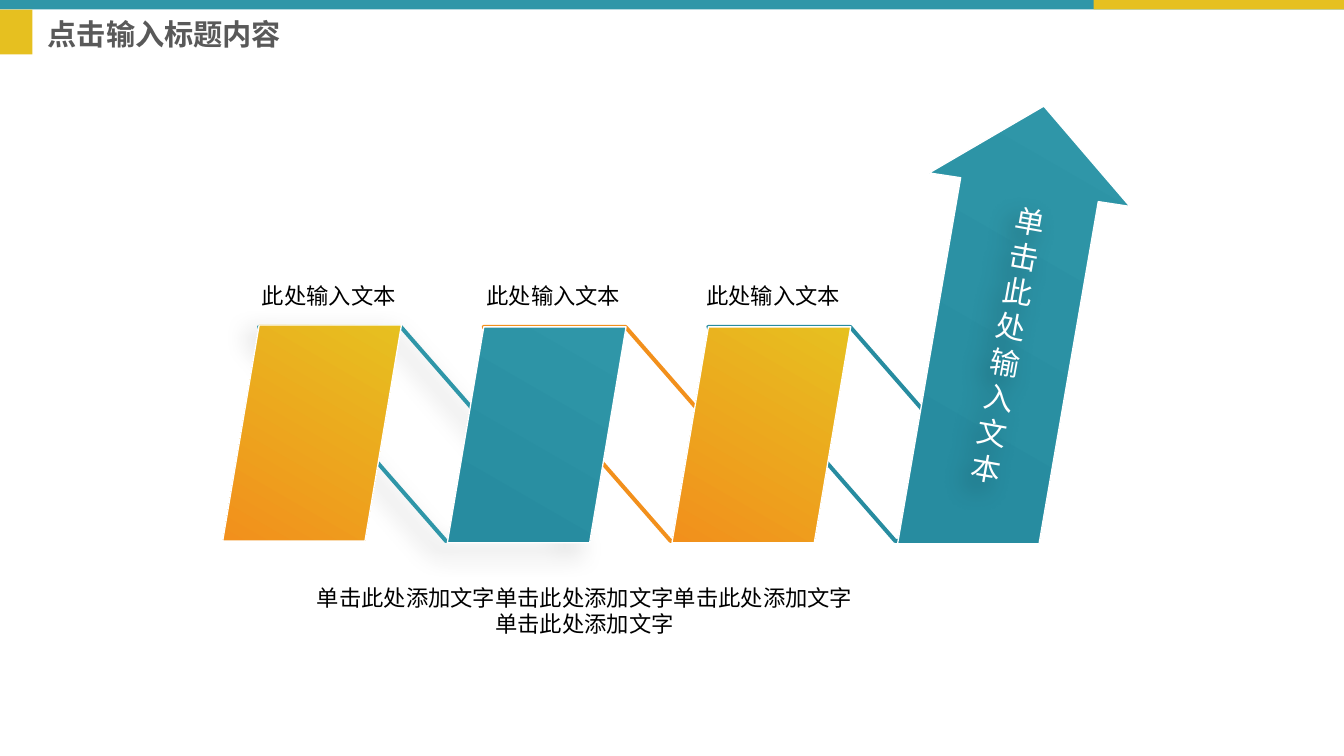
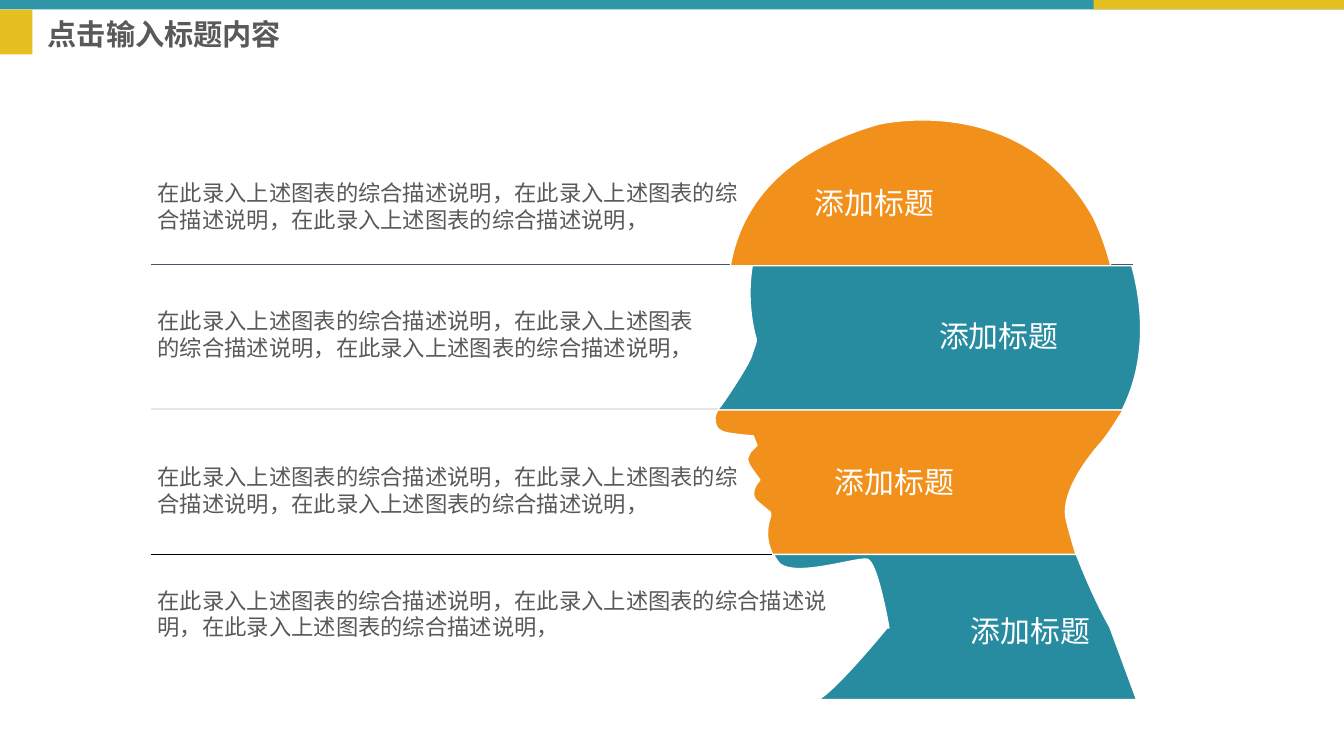
"""Build two diagram slides: rising steps and a banded head profile."""
from dataclasses import dataclass

from lxml import etree
from pptx import Presentation
from pptx.dml.color import RGBColor
from pptx.enum import shapes as kinds, text as txt
from pptx.oxml import ns
from pptx.util import Inches, Pt

FONT = "Roboto Condensed"
BODY = 16.8
HUES = {
    "teal": "2F96A8", "deep": "278CA0", "gold": "E6C020", "orange": "F2901C",
    "grey": "595959", "slate": "44546A", "pale": "E7E6E6",
    "black": "000000", "white": "FFFFFF",
}
TITLE = "点击输入标题内容"
LABEL = "此处输入文本"
HEAD = "添加标题"
NOTE = "在此录入上述图表的综合描述说明，" * 3
WARM = ("gold", "orange", 1.0)
COOL = ("teal", "deep", 0.89)


@dataclass
class Step:
    left: float
    top: float
    label: float
    link: float
    hue: str
    blend: tuple


@dataclass
class Band:
    hue: str
    start: tuple
    curve: list
    head: tuple
    note: tuple


@dataclass
class Rule:
    top: float
    right: float
    hue: str


STEPS = [
    Step(2.33, 3.4, 2.64, 2.71, "teal", WARM),
    Step(4.68, 3.42, 4.99, 5.06, "orange", COOL),
    Step(7.03, 3.42, 7.29, 7.41, "deep", WARM),
]
ARROW = [(11.82, 2.16), (11.49, 2.11), (10.87, 5.69), (9.39, 5.69),
         (10.05, 1.86), (9.72, 1.81)]
RULES = [Rule(2.77, 11.85, "slate"), Rule(4.28, 11.75, "pale"),
         Rule(5.8, 11.27, "black"), Rule(7.32, 11.89, "white")]
BANDS = [
    Band("orange", (11.43, 2.26), [
        (10.68, 0.94, 9.19, 1.3, 9.19, 1.3),
        (8.07, 1.62, 7.73, 2.26, 7.64, 2.78),
        (11.62, 2.78),
        (11.54, 2.46, 11.43, 2.26, 11.43, 2.26),
    ], (8.42, 1.88), (1.83, 6.35)),
    Band("deep", (7.91, 3.54), [
        (7.92, 3.58, 7.9, 3.6, 7.86, 3.73),
        (7.81, 3.86, 7.57, 4.21, 7.54, 4.25),
        (7.53, 4.26, 7.52, 4.27, 7.51, 4.29),
        (11.74, 4.29),
        (12.01, 3.75, 11.95, 3.18, 11.84, 2.78),
        (7.87, 2.78),
        (7.8, 3.2, 7.91, 3.54, 7.91, 3.54),
    ], (9.72, 3.27), (3.17, 5.96)),
    Band("orange", (7.48, 4.37), [
        (7.48, 4.44, 7.5, 4.49, 7.55, 4.51),
        (7.59, 4.54, 7.88, 4.56, 7.88, 4.56),
        (7.92, 4.66),
        (7.92, 4.66, 7.88, 4.7, 7.85, 4.73),
        (7.83, 4.76, 7.83, 4.77, 7.82, 4.8),
        (7.82, 4.83, 7.84, 4.86, 7.85, 4.88),
        (7.87, 4.91, 7.95, 5.02, 7.95, 5.02),
        (7.95, 5.02, 7.94, 5.04, 7.92, 5.06),
        (7.9, 5.09, 7.89, 5.12, 7.89, 5.12),
        (7.88, 5.15, 7.88, 5.18, 7.9, 5.22),
        (7.92, 5.25, 8.04, 5.34, 8.06, 5.36),
        (8.07, 5.38, 8.06, 5.41, 8.06, 5.41),
        (8, 5.58, 8.04, 5.72, 8.09, 5.81),
        (11.26, 5.81),
        (11.21, 5.65, 11.17, 5.51, 11.15, 5.41),
        (11.1, 5.08, 11.52, 4.63, 11.52, 4.63),
        (11.61, 4.52, 11.68, 4.4, 11.75, 4.29),
        (7.51, 4.29),
        (7.49, 4.31, 7.49, 4.34, 7.48, 4.37),
    ], (8.63, 4.8), (4.8, 6.28)),
    Band("deep", (8.16, 5.9), [
        (8.34, 6.04, 8.96, 5.83, 9.07, 5.85),
        (9.16, 5.86, 9.26, 6.34, 9.3, 6.57),
        (9.28, 6.57),
        (9.28, 6.57, 8.75, 7.22, 8.56, 7.32),
        (11.89, 7.32), (11.61, 6.56),
        (11.49, 6.35, 11.36, 6.06, 11.26, 5.8),
        (8.09, 5.8),
        (8.12, 5.85, 8.15, 5.89, 8.16, 5.9),
    ], (10.05, 6.36), (6.09, 7.42)),
]


def tint(hue: str) -> RGBColor:
    """Return the named colour."""
    return RGBColor.from_string(HUES[hue])


def paint(shape, fill=None, line=None, width: float = 1) -> None:
    """Set a solid, blended or empty fill and an outline."""
    shape.shadow.inherit = False
    if isinstance(fill, tuple):
        first, last, end = fill
        shape.fill.gradient()
        shape.fill.gradient_angle = 240
        stops = shape.fill.gradient_stops
        for stop, hue, place in zip(stops, (first, last), (0, end)):
            stop.color.rgb = tint(hue)
            stop.position = place
    elif fill:
        shape.fill.solid()
        shape.fill.fore_color.rgb = tint(fill)
    else:
        shape.fill.background()
    if line:
        shape.line.color.rgb = tint(line)
        shape.line.width = Pt(width)
    else:
        shape.line.fill.background()


def shade(shape) -> None:
    """Give a shape a soft shadow down to the left."""
    shape.shadow.inherit = False
    effect = shape._element.spPr.find(ns.qn("a:effectLst"))
    drop = etree.SubElement(effect, ns.qn("a:outerShdw"), blurRad=str(Pt(20)),
                            dist=str(Pt(10)), dir=str(136 * 60000),
                            rotWithShape="0")
    ink = etree.SubElement(drop, ns.qn("a:srgbClr"), val=HUES["black"])
    etree.SubElement(ink, ns.qn("a:alpha"), val="34000")


def block(slide, kind, box: tuple, fill=None, line=None, width: float = 1):
    """Draw a preset shape in a box given in inches."""
    shape = slide.shapes.add_shape(kind, *map(Inches, box))
    paint(shape, fill, line, width)
    return shape


def style(font, size: float, hue: str, bold: bool = False) -> None:
    """Set the face, size and colour of a font."""
    font.name = FONT
    font.size = Pt(size)
    font.color.rgb = tint(hue)
    if bold:
        font.bold = True


def write(slide, box: tuple, lines: list[str], size: float, hue: str,
          align=txt.PP_ALIGN.LEFT, wrap: bool = True, grow: bool = True):
    """Add a text box with one paragraph per line."""
    shape = slide.shapes.add_textbox(*map(Inches, box))
    frame = shape.text_frame
    frame.word_wrap = wrap
    if grow:
        frame.auto_size = txt.MSO_AUTO_SIZE.SHAPE_TO_FIT_TEXT
    frame.text = "\n".join(lines)
    for para in frame.paragraphs:
        para.alignment = align
        style(para.font, size, hue)
    return shape


def outline(slide, start: tuple, curve: list, fill) -> None:
    """Draw a closed outline of lines and cubic curves in inches."""
    points = [(Inches(part[i]), Inches(part[i + 1]))
              for part in curve for i in range(0, len(part), 2)]
    pen = slide.shapes.build_freeform(*map(Inches, start))
    pen.add_line_segments(points, close=True)
    shape = pen.convert_to_shape()
    paint(shape, fill, "white")
    lines = iter(list(shape._element.iter(ns.qn("a:lnTo"))))
    for part in curve:
        line = next(lines)
        if len(part) == 6:
            line.tag = ns.qn("a:cubicBezTo")
            for _ in range(2):
                spare = next(lines)
                line.append(spare[0])
                spare.getparent().remove(spare)


def begin(deck):
    """Add a slide with its top bands and title."""
    slide = deck.slides.add_slide(deck.slide_layouts[5])
    rect = kinds.MSO_SHAPE.RECTANGLE
    block(slide, rect, (0, 0, 14.06, 0.1), "teal")
    block(slide, rect, (11.44, 0, 2.62, 0.1), "gold")
    block(slide, rect, (0, 0.1, 0.34, 0.47), "gold")
    title = slide.shapes.title
    title.left, title.top, title.width, title.height = map(
        Inches, (0.4, 0.14, 3.62, 0.47))
    frame = title.text_frame
    frame.text = TITLE
    frame.auto_size = txt.MSO_AUTO_SIZE.NONE
    frame.vertical_anchor = txt.MSO_ANCHOR.MIDDLE
    para = frame.paragraphs[0]
    para.alignment = txt.PP_ALIGN.LEFT
    para.line_spacing = 0.9
    style(para.font, 22, "grey", True)
    return slide


def rise(deck) -> None:
    """Draw the linked steps that lead to an arrow."""
    slide = begin(deck)
    slant = kinds.MSO_SHAPE.PARALLELOGRAM
    for step in STEPS:
        link = block(slide, slant, (step.link, 3.42, 3.44, 2.24),
                     line=step.hue, width=3)
        link.adjustments[0] = 0.873
        link._element.spPr.xfrm.set("flipH", "1")
        if step is STEPS[0]:
            shade(link)
    for step in STEPS:
        write(slide, (step.label, 2.9, 1.62, 0.38), [LABEL], BODY, "black",
              wrap=False)
        tile = block(slide, slant, (step.left, step.top, 1.87, 2.26),
                     step.blend, "white")
        tile.adjustments[0] = 0.204
    mid = txt.PP_ALIGN.CENTER
    add = "单击此处添加文字"
    write(slide, (2.05, 6.06, 8.13, 0.67), [add * 3, add], BODY, "black", mid)
    outline(slide, (10.92, 1.11), ARROW, COOL)
    label = write(slide, (10.23, 2.35, 0.64, 2.51), ["单击此处输入文本"],
                  22.5, "white", mid, grow=False)
    label.text_frame.vertical_anchor = txt.MSO_ANCHOR.MIDDLE
    label.rotation = 10.2
    shade(label)


def profile(deck) -> None:
    """Draw the banded head with a note beside each band."""
    slide = begin(deck)
    for rule in RULES:
        y = Inches(rule.top)
        line = slide.shapes.add_connector(
            kinds.MSO_CONNECTOR.STRAIGHT, Inches(1.58), y,
            Inches(rule.right), y)
        line.line.color.rgb = tint(rule.hue)
        line.line.width = Pt(1)
        etree.SubElement(line._element.spPr, ns.qn("a:effectLst"))
    for band in BANDS:
        top, width = band.note
        write(slide, (1.55, top, width, 0.67), [NOTE], BODY, "grey")
        outline(slide, band.start, band.curve, band.hue)
        write(slide, (*band.head, 1.46, 0.48), [HEAD], 22.5, "white",
              txt.PP_ALIGN.CENTER, wrap=False)


def main() -> None:
    """Build and save the deck."""
    deck = Presentation()
    deck.slide_width, deck.slide_height = Inches(14.06), Inches(7.91)
    rise(deck)
    profile(deck)
    deck.save("out.pptx")


if __name__ == "__main__":
    main()
